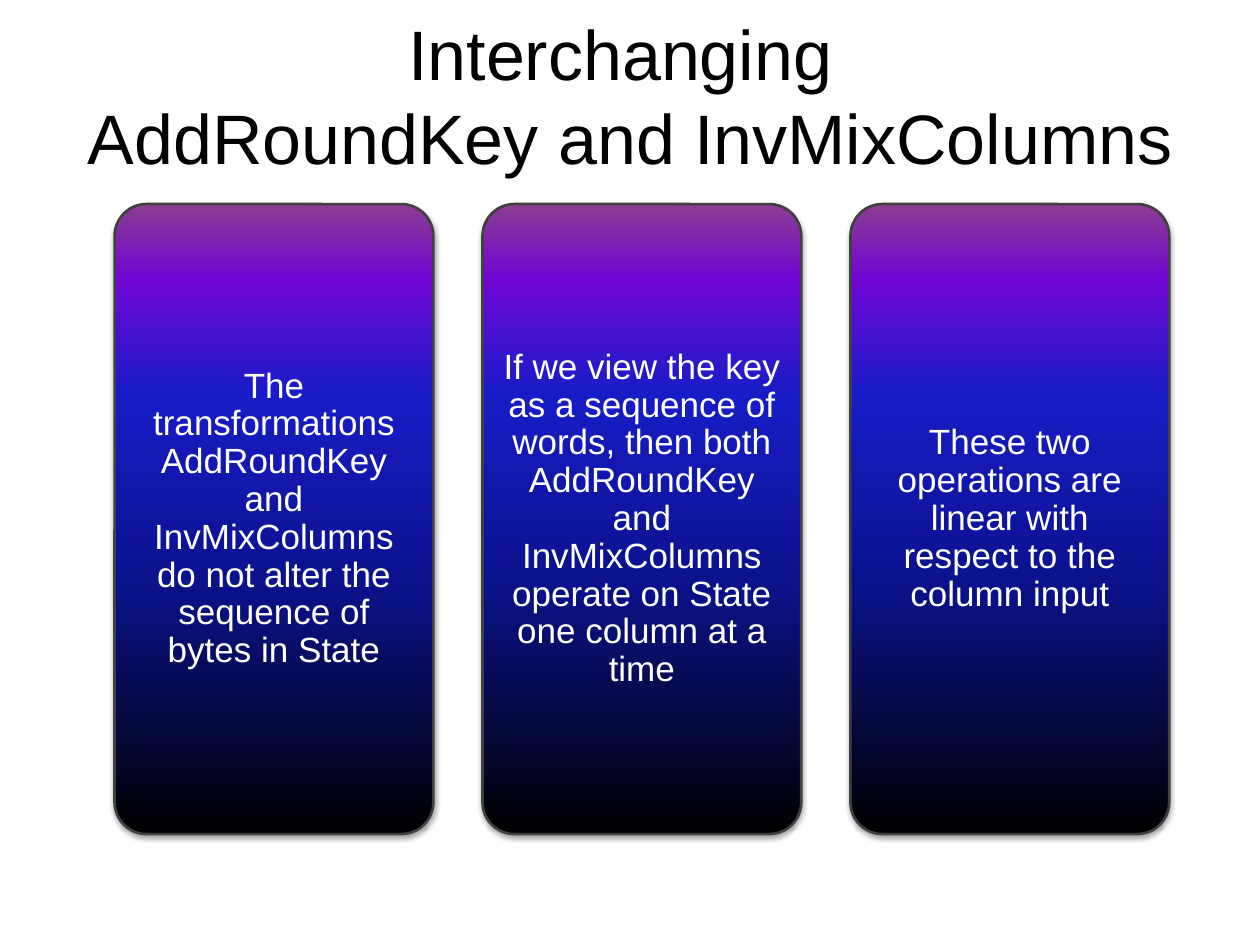
from pptx import Presentation
from pptx.dml.color import RGBColor
from pptx.enum.shapes import MSO_SHAPE as Kind
from pptx.enum.text import MSO_ANCHOR as Anchor, PP_ALIGN as Align
from pptx.oxml import parse_xml
from pptx.util import Inches, Pt

NS = 'xmlns:a="http://schemas.openxmlformats.org/drawingml/2006/main"'
WIDE, HIGH = 10, 7.5
STOPS = [(0, "000000"), (40, "0A128C"), (70, "181CC7"),
         (88, "7005D4"), (100, "8C3D91")]
TITLE = ["Interchanging ", "AddRoundKey and InvMixColumns"]
CARDS = [
    "The transformations AddRoundKey and InvMixColumns do not alter "
    "the sequence of bytes in State",
    "If we view the key as a sequence of words, then both AddRoundKey and "
    "InvMixColumns operate on State one column at a time",
    "These two operations are linear with respect to the column input",
]


def tint(code):
    return RGBColor.from_string(code)


def write(shape, lines, size, color, pad, space=1):
    frame = shape.text_frame
    frame.word_wrap = True
    frame.vertical_anchor = Anchor.MIDDLE
    frame.margin_left = frame.margin_right = Inches(pad)
    frame.margin_top = frame.margin_bottom = Inches(pad)
    para = frame.paragraphs[0]
    para.alignment = Align.CENTER
    para.line_spacing = space
    for spot, line in enumerate(lines):
        if spot:
            para.add_line_break()
        run = para.add_run()
        run.text = line
        run.font.name = "Arial"
        run.font.size = Pt(size)
        run.font.color.rgb = tint(color)


def shade(shape):
    props = shape._element.spPr
    stops = "".join(
        f'<a:gs pos="{pos * 1000}"><a:srgbClr val="{code}"/></a:gs>'
        for pos, code in STOPS)
    props.insert(2, parse_xml(
        f'<a:gradFill {NS} rotWithShape="1"><a:gsLst>{stops}</a:gsLst>'
        '<a:lin ang="16200000" scaled="0"/></a:gradFill>'))
    shape.shadow.inherit = False
    props.effectLst.append(parse_xml(
        f'<a:outerShdw {NS} blurRad="{Pt(3.1)}" dist="{Pt(1.8)}" '
        'dir="5400000" rotWithShape="0"><a:srgbClr val="000000">'
        '<a:alpha val="35000"/></a:srgbClr></a:outerShdw>'))


def head(slide, box):
    label = slide.shapes.add_textbox(*map(Inches, box))
    write(label, TITLE, 40, "000000", 0.05)


def card(slide, box, text):
    panel = slide.shapes.add_shape(
        Kind.ROUNDED_RECTANGLE, *map(Inches, box))
    panel.adjustments[0] = 0.1
    panel.line.color.rgb = tint("404040")
    panel.line.width = Pt(1.5)
    shade(panel)
    write(panel, [text], 20, "FFFFFF", 0.08, 0.9)


def row(slide, box, gap):
    left, top, width, height = box
    count = len(CARDS)
    each = (width - gap * (count - 1)) / count
    for spot, text in enumerate(CARDS):
        card(slide, (left + spot * (each + gap), top, each, height), text)


def main():
    deck = Presentation()
    deck.slide_width, deck.slide_height = Inches(WIDE), Inches(HIGH)
    slide = deck.slides.add_slide(deck.slide_layouts[6])
    head(slide, (0, 0.04, WIDE, HIGH * 0.19))
    row(slide, (0.91, 1.62, 8.37, HIGH * 2 / 3), 0.39)
    deck.save("out.pptx")


if __name__ == "__main__":
    main()
